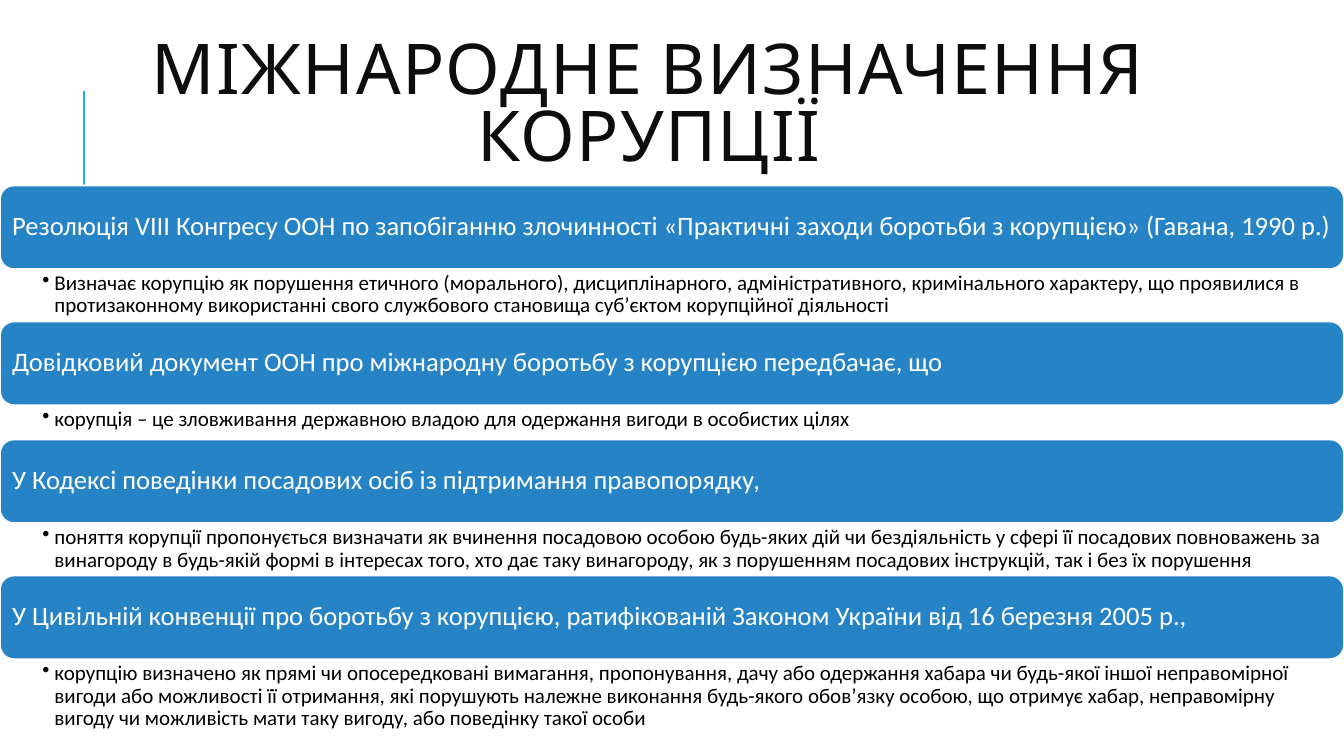
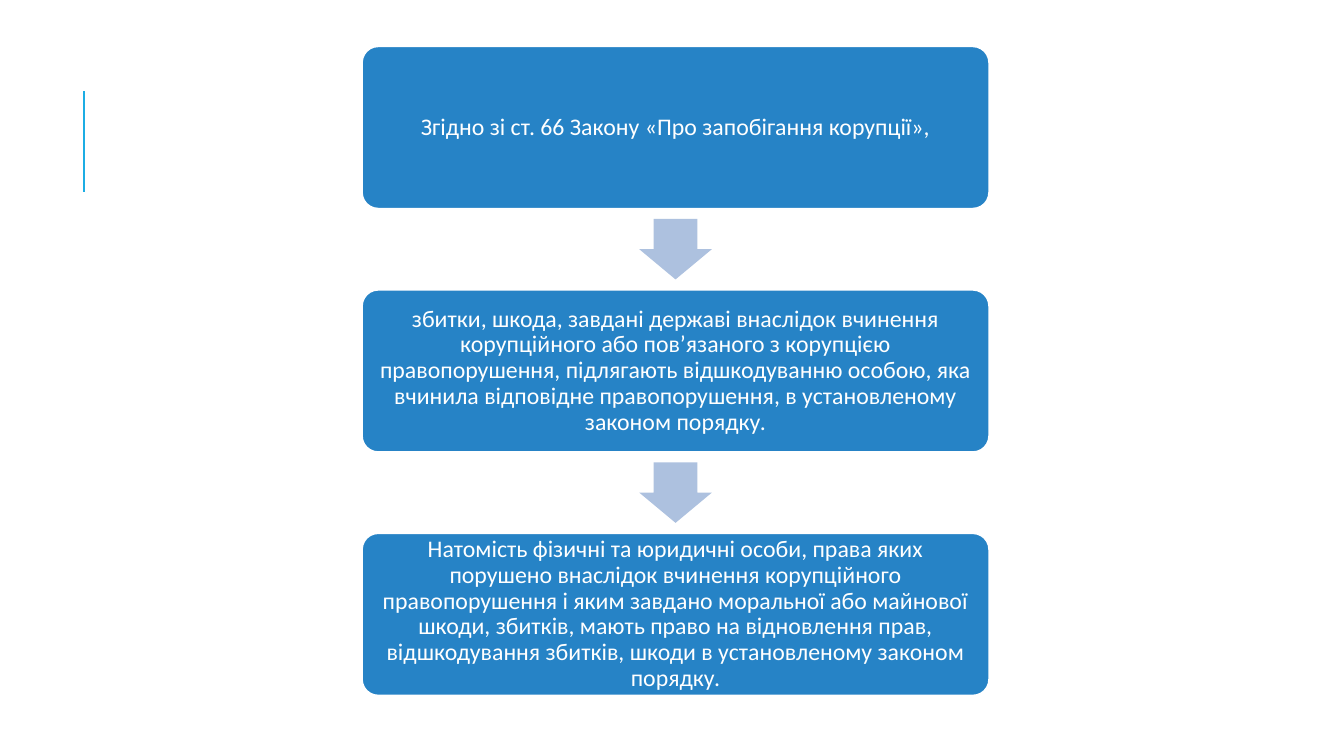
from lxml import etree
from pptx import Presentation
from pptx import util as u
from pptx.dml.color import RGBColor
from pptx.enum import shapes, text
from pptx.oxml.ns import qn

W, H = 13.33, 7.5
COLORS = {"accent": "1CADE4", "box": "2683C6", "arrow": "ADC1DF",
          "title": "0D0D0D", "body": "000000", "white": "FFFFFF"}
MIDDLE, TOP = text.MSO_ANCHOR.MIDDLE, text.MSO_ANCHOR.TOP
LEFT, CENTER = text.PP_ALIGN.LEFT, text.PP_ALIGN.CENTER

# Text styles; insets are left, top, right, bottom in inches
STYLES = {
    "title": dict(font="Cabin", size=50, color="title", spacing=0.8, align=CENTER,
                  anchor=MIDDLE, insets=(0.1, 0.05, 0.1, 0.05), tracking=1),
    "bar": dict(font="Calibri", size=19, color="white", spacing=0.9, align=LEFT,
                anchor=MIDDLE, insets=(0.08,) * 4),
    "detail": dict(font="Calibri", size=15, color="body", spacing=0.9, align=LEFT,
                   anchor=TOP, insets=(0.42, 0.03, 0.15, 0.03), bullet="•"),
    "step": dict(font="Calibri", size=17, color="white", spacing=0.9, align=CENTER,
                 anchor=MIDDLE, insets=(0.07,) * 4),
}

TITLE = "МІЖНАРОДНЕ ВИЗНАЧЕННЯ КОРУПЦІЇ"
# Heading, detail, height of the detail
DEFINITIONS = [
    ("Резолюція VIII Конгресу ООН по запобіганню злочинності «Практичні заходи "
     "боротьби з корупцією» (Гавана, 1990 р.)",
     "Визначає корупцію як порушення етичного (морального), дисциплінарного, "
     "адміністративного, кримінального характеру, що проявилися в протизаконному "
     "використанні свого службового становища суб’єктом корупційної діяльності", 0.52),
    ("Довідковий документ ООН про міжнародну боротьбу з корупцією передбачає, що",
     "корупція – це зловживання державною владою для одержання вигоди в особистих "
     "цілях", 0.34),
    ("У Кодексі поведінки посадових осіб із підтримання правопорядку,",
     "поняття корупції пропонується визначати як вчинення посадовою особою будь-яких "
     "дій чи бездіяльність у сфері її посадових повноважень за винагороду в будь-якій "
     "формі в інтересах того, хто дає таку винагороду, як з порушенням посадових "
     "інструкцій, так і без їх порушення", 0.52),
    ("У Цивільній конвенції про боротьбу з корупцією, ратифікованій Законом України "
     "від 16 березня 2005 р.,",
     "корупцію визначено як прямі чи опосередковані вимагання, пропонування, дачу або "
     "одержання хабара чи будь-якої іншої неправомірної вигоди або можливості її "
     "отримання, які порушують належне виконання будь-якого обов’язку особою, що "
     "отримує хабар, неправомірну вигоду чи можливість мати таку вигоду, або поведінку "
     "такої особи", 0.75),
]
STEPS = [
    "Згідно зі ст. 66 Закону «Про запобігання корупції»,",
    "збитки, шкода, завдані державі внаслідок вчинення корупційного або пов’язаного з "
    "корупцією правопорушення, підлягають відшкодуванню особою, яка вчинила відповідне "
    "правопорушення, в установленому законом порядку.",
    "Натомість фізичні та юридичні особи, права яких порушено внаслідок вчинення "
    "корупційного правопорушення і яким завдано моральної або майнової шкоди, збитків, "
    "мають право на відновлення прав, відшкодування збитків, шкоди в установленому "
    "законом порядку.",
]


def rgb(name):
    return RGBColor.from_string(COLORS[name])


def inches(*values):
    return [u.Inches(v) for v in values]


def write(sp, content, style):
    st = STYLES[style]
    tf = sp.text_frame
    left, top, right, bottom = inches(*st["insets"])
    frame = dict(word_wrap=True, vertical_anchor=st["anchor"], margin_left=left,
                 margin_top=top, margin_right=right, margin_bottom=bottom)
    for name, value in frame.items():
        setattr(tf, name, value)
    p = tf.paragraphs[0]
    p.alignment, p.line_spacing = st["align"], st["spacing"]
    r = p.add_run()
    r.text = content
    r.font.name, r.font.size = st["font"], u.Pt(st["size"])
    r.font.color.rgb = rgb(st["color"])
    if "tracking" in st:
        r.font._element.set("spc", str(st["tracking"] * 100))
    if "bullet" in st:
        pPr = p._p.get_or_add_pPr()
        indent = u.Inches(0.12)
        pPr.set("marL", str(indent))
        pPr.set("indent", str(-indent))
        etree.SubElement(pPr, qn("a:buChar"), char=st["bullet"])


def add_text(slide, box, content, style):
    write(slide.shapes.add_textbox(*inches(*box)), content, style)


def add_shape(slide, kind, box, fill, adjustments=(), outlined=False):
    sp = slide.shapes.add_shape(kind, *inches(*box))
    sp.shadow.inherit = False
    sp.fill.solid()
    sp.fill.fore_color.rgb = rgb(fill)
    if outlined:
        sp.line.color.rgb, sp.line.width = rgb("white"), u.Pt(1.25)
    else:
        sp.line.fill.background()
    for i, value in enumerate(adjustments):
        sp.adjustments[i] = value
    return sp


def add_slide(prs):
    """Blank slide with the accent line that every slide carries."""
    slide = prs.slides.add_slide(prs.slide_layouts[6])
    line = slide.shapes.add_connector(shapes.MSO_CONNECTOR.STRAIGHT,
                                      *inches(0.83, 1.9, 0.83, 0.9))
    line.line.color.rgb, line.line.width = rgb("accent"), u.Pt(1.5)
    etree.SubElement(line._element.spPr, qn("a:effectLst"))
    return slide


def build_definitions(prs):
    slide = add_slide(prs)
    add_text(slide, (1.12, 0.25, 10.63, 1.64), TITLE, "title")
    y, bar_h = 1.84, 0.83
    for heading, detail, detail_h in DEFINITIONS:
        bar = add_shape(slide, shapes.MSO_SHAPE.ROUNDED_RECTANGLE, (0, y, W, bar_h),
                        "box", outlined=True)
        write(bar, heading, "bar")
        add_text(slide, (0, y + bar_h, W, detail_h), detail, "detail")
        y += bar_h + detail_h


def build_steps(prs):
    slide = add_slide(prs)
    x, top, w, h, gap = 3.59, 0.46, 6.22, 1.61, 0.805
    arrow_w, arrow_h = 0.72, 0.6
    for i, step in enumerate(STEPS):
        y = top + i * (h + gap)
        if i:
            box = (x + (w - arrow_w) / 2, y - (gap + arrow_h) / 2, arrow_w, arrow_h)
            add_shape(slide, shapes.MSO_SHAPE.DOWN_ARROW, box, "arrow", (0.6, 0.5))
        sp = add_shape(slide, shapes.MSO_SHAPE.ROUNDED_RECTANGLE, (x, y, w, h), "box",
                       (0.1,), outlined=True)
        write(sp, step, "step")


def main():
    prs = Presentation()
    prs.slide_width, prs.slide_height = inches(W, H)
    build_definitions(prs)
    build_steps(prs)
    prs.save("out.pptx")


if __name__ == "__main__":
    main()
